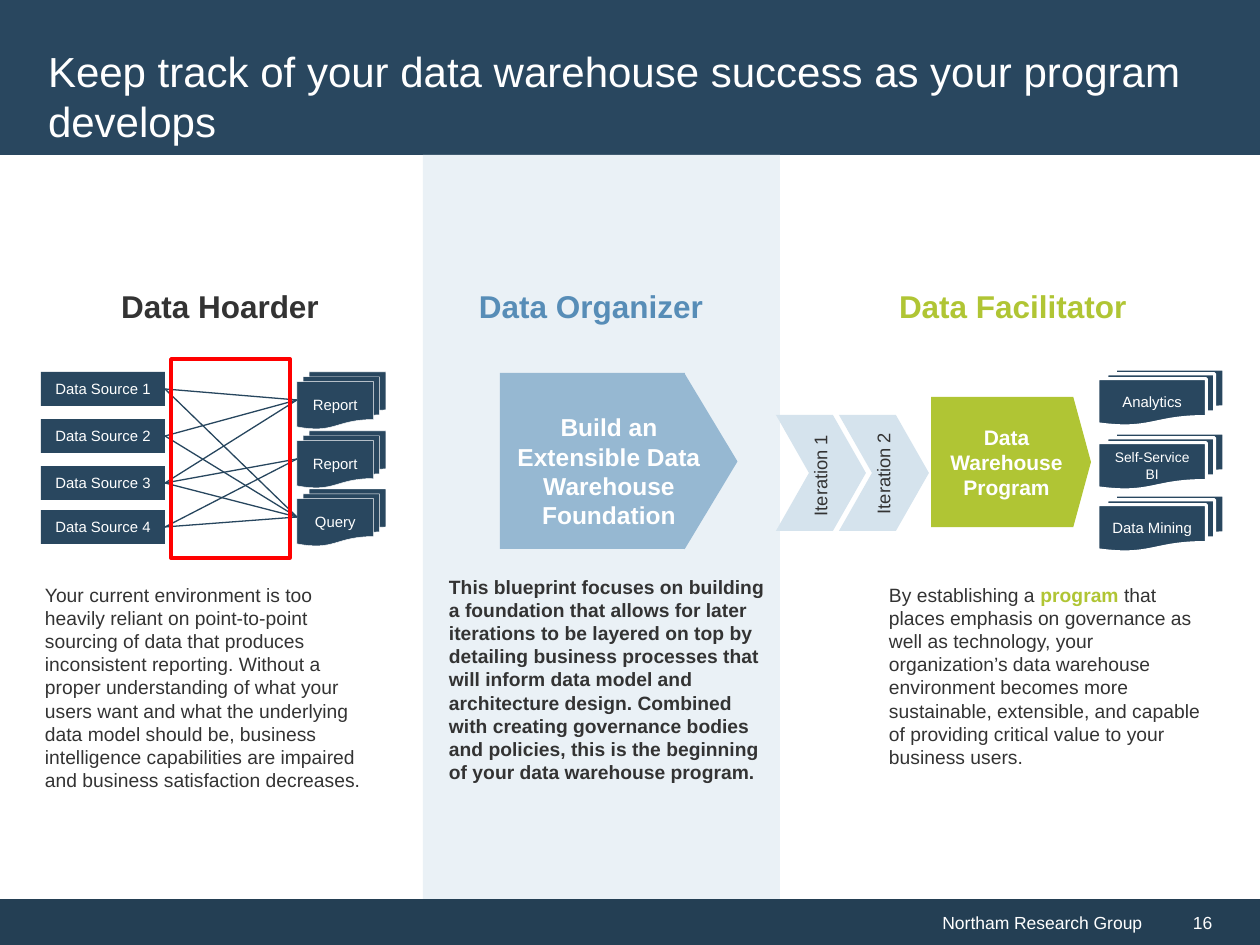
from lxml.etree import SubElement
from pptx import Presentation
from pptx.dml.color import RGBColor
from pptx.enum.shapes import MSO_CONNECTOR, MSO_SHAPE as Shape
from pptx.enum.text import MSO_ANCHOR as Anchor, PP_ALIGN as Align
from pptx.oxml.ns import qn
from pptx.util import Emu, Pt

EMU_PER_PX = 914400 / 126
COLORS = {
    "navy": "29475F", "footer": "243F54", "link": "27465E", "panel": "EAF1F6",
    "foundation": "96B8D2", "iteration": "D5E3ED", "organizer": "578DB7",
    "program": "B0C534", "alert": "FF0000", "ink": "333333", "white": "FFFFFF",
}
LINKS = [(0, 0), (1, 0), (2, 2), (3, 1), (3, 2), (0, 2), (2, 1), (2, 0), (1, 2)]
HOARDER_TEXT = (
    "Your current environment is too heavily reliant on point-to-point sourcing of data "
    "that produces inconsistent reporting. Without a proper understanding of what your "
    "users want and what the underlying data model should be, business intelligence "
    "capabilities are impaired and business satisfaction decreases."
)
ORGANIZER_TEXT = (
    "This blueprint focuses on building a foundation that allows for later iterations to "
    "be layered on top by detailing business processes that will inform data model and "
    "architecture design. Combined with creating governance bodies and policies, this is "
    "the beginning of your data warehouse program."
)
FACILITATOR_TEXT = (
    "By establishing a ", "program",
    " that places emphasis on governance as well as technology, your organization’s data "
    "warehouse environment becomes more sustainable, extensible, and capable of providing "
    "critical value to your business users.",
)


def px(length):
    """Turn pixels into EMU."""
    return Emu(round(length * EMU_PER_PX))


def rgb(name):
    """Look up a palette colour."""
    return RGBColor.from_string(COLORS[name])


def style_run(run, size, color, bold=False):
    """Format one run."""
    run.font.name = "Arial"
    run.font.size = Pt(size)
    run.font.bold = bold
    run.font.color.rgb = rgb(color)


def write(holder, text, size, color="white", bold=False, align=Align.CENTER,
          anchor=Anchor.MIDDLE, inset=10):
    """Put one formatted paragraph into a shape."""
    frame = holder.text_frame
    frame.text = text
    frame.word_wrap = True
    frame.vertical_anchor = anchor
    frame.margin_left = frame.margin_right = px(inset)
    paragraph = frame.paragraphs[0]
    paragraph.alignment = align
    for run in paragraph.runs:
        style_run(run, size, color, bold)
    return paragraph


def add_block(slide, preset, box, fill=None, line=None, weight=1):
    """Add a preset shape with plain fill and outline."""
    block = slide.shapes.add_shape(preset, *map(px, box))
    block.shadow.inherit = False
    if fill:
        block.fill.solid()
        block.fill.fore_color.rgb = rgb(fill)
    else:
        block.fill.background()
    if line:
        block.line.color.rgb = rgb(line)
        block.line.width = Pt(weight)
    else:
        block.line.fill.background()
    return block


def add_text(slide, box, text, size, color="ink", bold=False, align=Align.LEFT):
    """Add a wrapped text box anchored at the top."""
    label = slide.shapes.add_textbox(*map(px, box))
    write(label, text, size, color, bold, align, Anchor.TOP, inset=13)
    return label


def add_link(slide, source, end):
    """Join the right side of a data source to a point."""
    link = slide.shapes.add_connector(MSO_CONNECTOR.STRAIGHT, 0, 0, *map(px, end))
    link.begin_connect(source, 3)
    link.line.color.rgb = rgb("link")
    link.line.width = Pt(0.75)
    SubElement(link._element.spPr, qn("a:effectLst"))


def add_documents(slide, left, width, entries, weight):
    """Stack document symbols, each given by its top, label and text size."""
    for top, label, size in entries:
        document = add_block(slide, Shape.FLOWCHART_MULTIDOCUMENT,
                             (left, top, width, 57), "navy", "white", weight)
        write(document, label, size)


def add_frame(slide):
    """Build the header, title, footer and highlighted column."""
    footer = add_block(slide, Shape.RECTANGLE, (0, 899, 1155, 47), "footer")
    write(footer, "Northam Research Group", 10, align=Align.RIGHT, inset=13)
    number = add_block(slide, Shape.RECTANGLE, (1155, 899, 105, 47), "footer")
    write(number, "16", 10, align=Align.LEFT, inset=38)
    add_block(slide, Shape.RECTANGLE, (0, 0, 1260, 155), "navy")
    add_block(slide, Shape.RECTANGLE, (423, 155, 357, 744), "panel")
    title = slide.shapes.title
    title.left, title.top, title.width, title.height = map(px, (35, 35, 1188, 121))
    write(title, "Keep track of your data warehouse success as your program develops",
          24, align=Align.LEFT, inset=13)
    slide.shapes._spTree.append(title._element)


def add_hoarder(slide, left, top):
    """Build the point-to-point column."""
    add_text(slide, (left + 45, top, 286, 50), "Data Hoarder", 18, bold=True,
             align=Align.CENTER)
    sources = []
    for index, offset in enumerate((91, 138, 185, 229), 1):
        source = add_block(slide, Shape.RECTANGLE, (left + 9, top + offset, 124, 34), "navy")
        write(source, f"Data Source {index}", 8.5)
        sources.append(source)
    outputs = [(top + 91, "Report", 8.5), (top + 150, "Report", 8.5), (top + 208, "Query", 8.5)]
    add_documents(slide, left + 265, 89, outputs, 0.25)
    for source, output in LINKS:
        add_link(slide, sources[source], (left + 265, outputs[output][0] + 28))
    add_block(slide, Shape.RECTANGLE, (left + 139, top + 78, 119, 199), line="alert", weight=2)
    add_text(slide, (left, top + 296, 354, 223), HOARDER_TEXT, 11)


def add_organizer(slide, left, top):
    """Build the foundation column."""
    add_text(slide, (left + 30, top, 286, 50), "Data Organizer", 18, "organizer", True)
    add_block(slide, Shape.RECTANGLE, (left + 64, top + 92, 185, 176), "foundation")
    tip = add_block(slide, Shape.ISOSCELES_TRIANGLE,
                    (left + 187, top + 154, 176, 53), "foundation")
    tip.rotation = 90
    add_text(slide, (left + 59, top + 125, 228, 135),
             "Build an Extensible Data Warehouse Foundation", 14, "white", True, Align.CENTER)
    add_text(slide, (left, top + 288, 345, 223), ORGANIZER_TEXT, 11, bold=True)


def add_iterations(slide, left, top):
    """Build the chevrons with their turned labels."""
    for index in range(2):
        start = left + 63 * index
        chevron = add_block(slide, Shape.CHEVRON, (start, top, 90, 116), "iteration")
        chevron.adjustments[0] = 0.367
        label = add_text(slide, (start - 30, top + 42 - 2 * index, 151, 37),
                         f"Iteration {index + 1}", 10.5, align=Align.CENTER)
        label.rotation = 270


def add_facilitator(slide, left, top):
    """Build the program column."""
    add_text(slide, (left + 10, top, 286, 50), "Data Facilitator", 18, "program", True)
    program = add_block(slide, Shape.PENTAGON, (left + 55, top + 116, 160, 130), "program")
    program.adjustments[0] = 0.136
    write(program, "Data Warehouse Program", 12, bold=True)
    uses = [(top + 88, "Analytics", 8.5), (top + 152, "Self-Service BI", 7.9),
            (top + 214, "Data Mining", 8.5)]
    add_documents(slide, left + 222, 126, uses, 1.75)
    opening, keyword, rest = FACILITATOR_TEXT
    summary = add_text(slide, (left, top + 296, 348, 199), opening, 11)
    paragraph = summary.text_frame.paragraphs[0]
    for text, color, bold in ((keyword, "program", True), (rest, "ink", False)):
        run = paragraph.add_run()
        run.text = text
        style_run(run, 11, color, bold)


def main():
    """Build and save the slide."""
    deck = Presentation()
    deck.slide_width, deck.slide_height = px(1260), px(945)
    slide = deck.slides.add_slide(deck.slide_layouts[5])
    add_frame(slide)
    add_hoarder(slide, 32, 281)
    add_organizer(slide, 436, 281)
    add_iterations(slide, 776, 415)
    add_facilitator(slide, 876, 281)
    deck.save("out.pptx")


if __name__ == "__main__":
    main()
